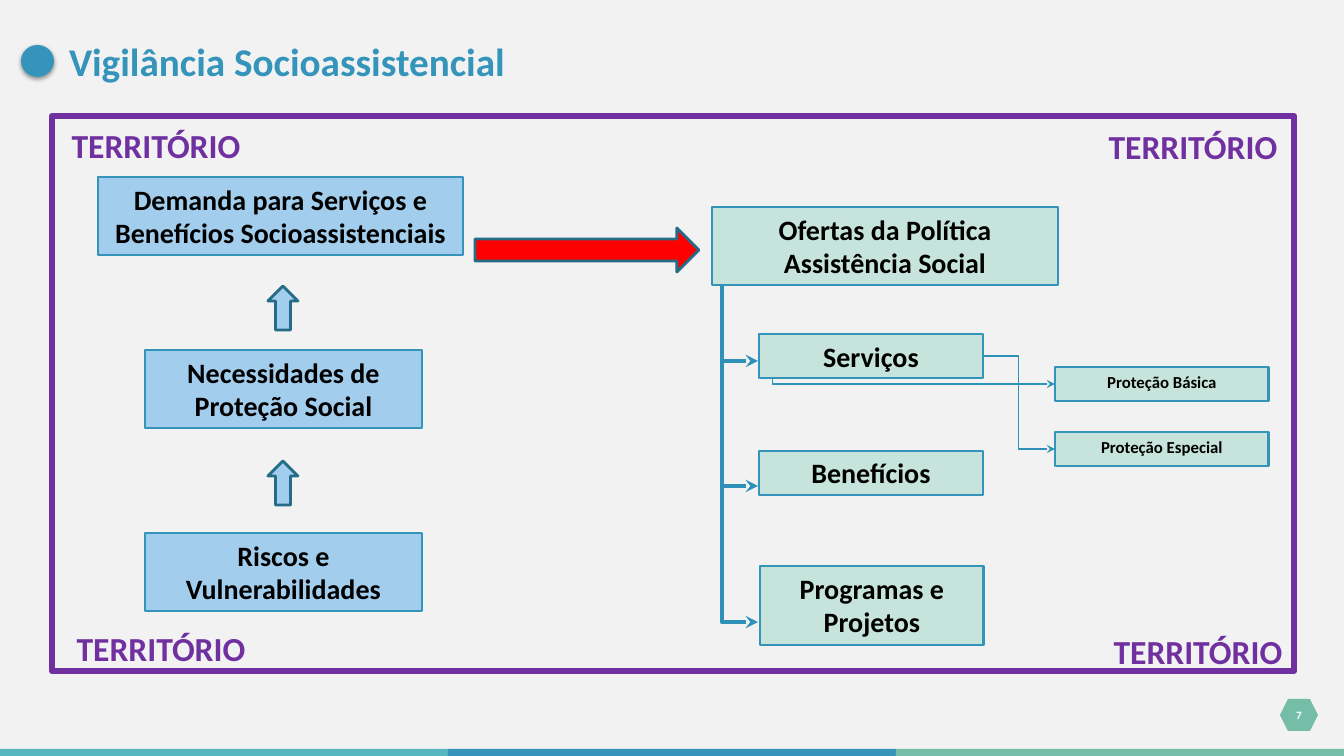
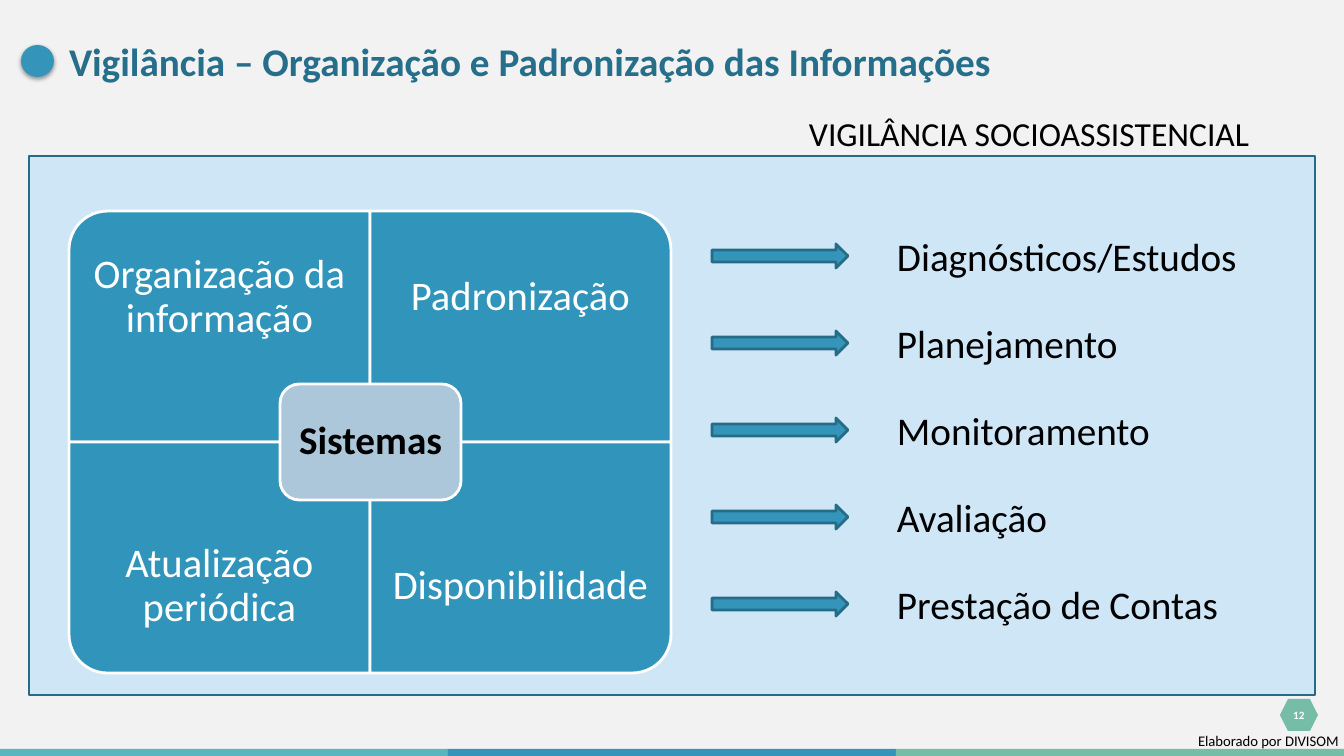
"""Builds two slides on social assistance surveillance."""
import lxml.etree
import pptx
import pptx.dml.color
import pptx.enum.shapes
import pptx.enum.text
import pptx.oxml.ns
import pptx.util

SHAPE = pptx.enum.shapes.MSO_SHAPE
ALIGN = pptx.enum.text.PP_ALIGN
ANCHOR = pptx.enum.text.MSO_ANCHOR
qn = pptx.oxml.ns.qn

WIDTH, HEIGHT = 1344, 756
SCALE = 12192000 / WIDTH
FONT = "Calibri"
COLORS = {
    "background": "F2F2F2",
    "blue": "3494BA",
    "quadrant": "3194BA",
    "connector": "2E91B8",
    "dark": "256C87",
    "title_dark": "266F8B",
    "teal": "58B6C0",
    "green": "75BDA7",
    "pale_green": "C6E4DB",
    "pale_blue": "A2CDED",
    "panel": "CFE6F6",
    "center": "ACC7D9",
    "purple": "7030A0",
    "red": "FF0000",
    "white": "FFFFFF",
    "black": "000000",
}


def px(*lengths):
    """Turn pixel lengths into EMU."""
    return [pptx.util.Emu(round(n * SCALE)) for n in lengths]


def rgb(name):
    """Look up a palette colour."""
    return pptx.dml.color.RGBColor.from_string(COLORS[name])


def put_text(sp, text, size=20, color="black", bold=False, align=ALIGN.CENTER,
             anchor=ANCHOR.TOP, insets=(10, 5, 10, 5), spacing=None):
    """Write one formatted paragraph into a shape."""
    tf = sp.text_frame
    tf.word_wrap = True
    tf.auto_size = pptx.enum.text.MSO_AUTO_SIZE.NONE
    tf.vertical_anchor = anchor
    tf.margin_left, tf.margin_top, tf.margin_right, tf.margin_bottom = px(*insets)
    p = tf.paragraphs[0]
    p.alignment = align
    if spacing:
        p.line_spacing = spacing
    r = p.add_run()
    r.text = text
    r.font.name = FONT
    r.font.size = pptx.util.Pt(size)
    r.font.bold = bold
    r.font.color.rgb = rgb(color)


def add_box(s, kind, at, fill=None, line=None, weight=2):
    """Add a preset shape without shadow."""
    sp = s.shapes.add_shape(kind, *px(*at))
    sp.shadow.inherit = False
    if fill:
        sp.fill.solid()
        sp.fill.fore_color.rgb = rgb(fill)
    else:
        sp.fill.background()
    if line:
        sp.line.color.rgb = rgb(line)
        sp.line.width = pptx.util.Pt(weight)
    else:
        sp.line.fill.background()
    return sp


def add_label(s, at, text, **fmt):
    """Add a text box."""
    put_text(s.shapes.add_textbox(*px(*at)), text, **fmt)


def add_card(s, at, text, fill, size=20):
    """Add an outlined rectangle with bold text."""
    put_text(add_box(s, SHAPE.RECTANGLE, at, fill, "blue"), text, size=size, bold=True)


def add_elbow(s, start, end, bend, weight):
    """Add an elbow arrow that turns at a share of its width."""
    kind = pptx.enum.shapes.MSO_CONNECTOR.ELBOW
    cn = s.shapes.add_connector(kind, *px(*start, *end))
    cn.line.color.rgb = rgb("connector")
    cn.line.width = pptx.util.Pt(weight)
    sppr = cn._element.spPr
    guides = sppr.find(qn("a:prstGeom")).get_or_add_avLst()
    lxml.etree.SubElement(guides, qn("a:gd"), name="adj1", fmla=f"val {round(bend * 100000)}")
    lxml.etree.SubElement(sppr.find(qn("a:ln")), qn("a:tailEnd"), type="stealth")
    lxml.etree.SubElement(sppr, qn("a:effectLst"))


def add_dot(s):
    """Add the title bullet with its soft shadow."""
    sp = add_box(s, SHAPE.OVAL, (21, 45, 33, 32), "blue")
    effects = sp._element.spPr.find(qn("a:effectLst"))
    shadow = lxml.etree.SubElement(effects, qn("a:outerShdw"), blurRad="39400", dist="20300",
                                   dir="5400000", rotWithShape="0")
    color = lxml.etree.SubElement(shadow, qn("a:srgbClr"), val=COLORS["black"])
    lxml.etree.SubElement(color, qn("a:alpha"), val="38000")


def add_slide(prs, title, number, color):
    """Add a slide with title, bullet, footer bands and page number."""
    s = prs.slides.add_slide(prs.slide_layouts[5])
    band = WIDTH // 3
    for i, fill in enumerate(("teal", "blue", "green")):
        add_box(s, SHAPE.RECTANGLE, (i * band, 749, band, 7), fill)
    badge = add_box(s, SHAPE.HEXAGON, (1280, 699, 38, 32), "green")
    badge.adjustments[0] = 0.25
    put_text(badge, number, size=8, color="white", bold=True,
             anchor=ANCHOR.MIDDLE, insets=(0, 0, 0, 0))
    add_dot(s)
    sp = s.shapes.title
    sp.left, sp.top, sp.width, sp.height = px(69, 29, 1174, 64)
    put_text(sp, title, size=28, color=color, bold=True, align=ALIGN.LEFT,
             anchor=ANCHOR.MIDDLE, insets=(0, 0, 0, 0))
    return s


def build_territory(prs):
    """Build the slide on demand and supply within the territory."""
    s = add_slide(prs, "Vigilância Socioassistencial", "7", "blue")
    for y in (361, 486, 622):
        add_elbow(s, (722, 286), (758, y), 0, 3)
    for y, bend in ((384, -2.93), (449, 0.5)):
        add_elbow(s, (983, 356), (1055, y), bend, 0.75)
    add_box(s, SHAPE.RECTANGLE, (52, 116, 1242, 555), line="purple", weight=4.5)

    for at, text in (
        ((98, 177, 365, 78), "Demanda para Serviços e Benefícios Socioassistenciais"),
        ((145, 350, 277, 78), "Necessidades de Proteção Social"),
        ((145, 533, 277, 78), "Riscos e Vulnerabilidades"),
    ):
        add_card(s, at, text, "pale_blue")
    for at, text in (
        ((712, 207, 346, 78), "Ofertas da Política Assistência Social"),
        ((759, 334, 224, 44), "Serviços"),
        ((759, 451, 224, 44), "Benefícios"),
        ((760, 566, 224, 79), "Programas e Projetos"),
    ):
        add_card(s, at, text, "pale_green")
    for y, text in ((367, "Proteção Básica"), (432, "Proteção Especial")):
        add_card(s, (1055, y, 214, 34), text, "pale_green", size=12)

    for y in (286, 461):
        add_box(s, SHAPE.UP_ARROW, (268, y, 30, 44), "pale_blue", "dark")
    add_box(s, SHAPE.RIGHT_ARROW, (475, 228, 224, 44), "red", "dark")
    for x, y in ((54, 120), (1091, 121), (59, 623), (1096, 626)):
        add_label(s, (x, y, 204, 45), "TERRITÓRIO", size=24, color="purple", bold=True)


def add_quadrants(s):
    """Add the four rounded quadrants around a central box."""
    left, top, w, h = 69, 211, 301, 231
    text_h = 173
    for i, (text, angle) in enumerate((
        ("Organização da informação", 270),
        ("Padronização", 0),
        ("Atualização periódica", 180),
        ("Disponibilidade", 90),
    )):
        row, col = divmod(i, 2)
        x, y = left + col * w, top + row * h
        turned = angle % 180 != 0
        at = (x + (w - h) / 2, y + (h - w) / 2, h, w) if turned else (x, y, w, h)
        sp = add_box(s, SHAPE.ROUND_1_RECTANGLE, at, "quadrant", "white")
        sp.rotation = angle
        add_label(s, (x, y + row * (h - text_h), w, text_h), text, size=29, color="white",
                  anchor=ANCHOR.MIDDLE, insets=(16, 23, 16, 23), spacing=0.9)
    sp = add_box(s, SHAPE.ROUNDED_RECTANGLE, (280, 384, 181, 116), "center", "white")
    put_text(sp, "Sistemas", size=28, bold=True, anchor=ANCHOR.MIDDLE,
             insets=(12, 12, 12, 12), spacing=0.9)


def build_information(prs):
    """Build the slide on organising and standardising information."""
    s = add_slide(prs, "Vigilância – Organização e Padronização das Informações",
                  "12", "title_dark")
    add_box(s, SHAPE.RECTANGLE, (29, 156, 1286, 539), "panel", "dark")
    add_label(s, (1188, 727, 156, 28), "Elaborado por DIVISOM", size=10.5,
              align=ALIGN.LEFT, insets=(10, 5, 0, 5))
    add_label(s, (799, 108, 467, 50), "VIGILÂNCIA SOCIOASSISTENCIAL", size=24,
              align=ALIGN.LEFT)
    add_quadrants(s)
    results = ("Diagnósticos/Estudos", "Planejamento", "Monitoramento",
               "Avaliação", "Prestação de Contas")
    for i, text in enumerate(results):
        step = i * 87
        add_box(s, SHAPE.RIGHT_ARROW, (712, 244 + step, 136, 24), "blue", "dark")
        add_label(s, (887, 227 + step, 380, 57), text, size=28, align=ALIGN.LEFT)


def main():
    """Build and save the presentation."""
    prs = pptx.Presentation()
    prs.slide_width, prs.slide_height = px(WIDTH, HEIGHT)
    fill = prs.slide_master.background.fill
    fill.solid()
    fill.fore_color.rgb = rgb("background")
    build_territory(prs)
    build_information(prs)
    prs.save("out.pptx")


if __name__ == "__main__":
    main()
